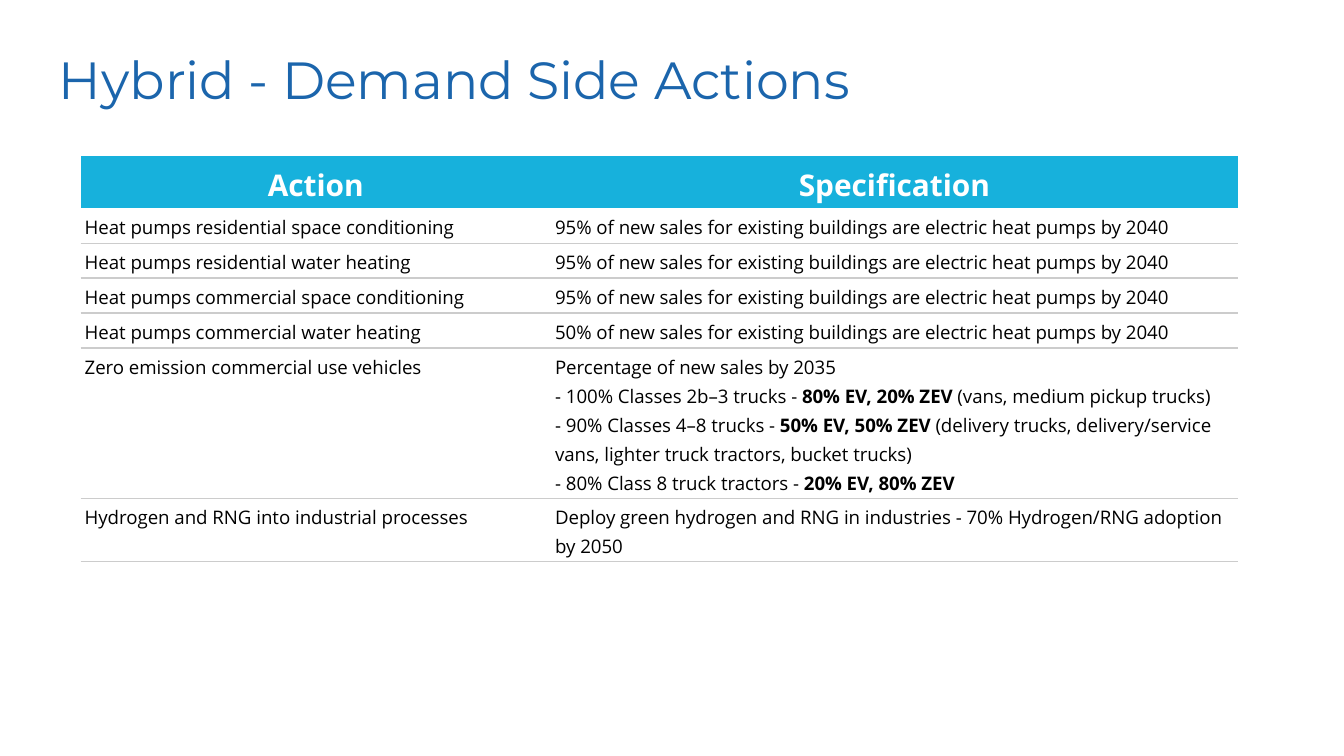
"""Build the slide of demand side actions for the hybrid case."""
from lxml.etree import SubElement
from pptx import Presentation
from pptx.dml.color import RGBColor
from pptx.enum.text import MSO_ANCHOR, PP_ALIGN
from pptx.oxml import parse_xml
from pptx.oxml.ns import nsdecls, qn
from pptx.util import Inches, Pt

BLUE = RGBColor(0x1B, 0x65, 0xAC)
CYAN = RGBColor(0x17, 0xB1, 0xDC)
GRAY = RGBColor(0xCC, 0xCC, 0xCC)
WHITE = RGBColor(0xFF, 0xFF, 0xFF)
BLACK = RGBColor(0, 0, 0)
PLAIN = "{2D5ABB26-0587-4C30-8999-92F81FD0307C}"

TITLE = "Hybrid - Demand Side Actions"
SALES = "% of new sales for existing buildings are electric heat pumps by 2040"
MARK = "*"
ROWS = [
    ("Action", ["Specification"]),
    ("Heat pumps residential space conditioning", ["95" + SALES]),
    ("Heat pumps residential water heating", ["95" + SALES]),
    ("Heat pumps commercial space conditioning", ["95" + SALES]),
    ("Heat pumps commercial water heating", ["50" + SALES]),
    ("Zero emission commercial use vehicles", [
        "Percentage of new sales by 2035",
        "- 100% Classes 2b–3 trucks - *80% EV, 20% ZEV* (vans, medium pickup trucks)",
        "- 90% Classes 4–8 trucks - *50% EV, 50% ZEV *(delivery trucks, "
        "delivery/service vans, lighter truck tractors, bucket trucks)",
        "- 80% Class 8 truck tractors - *20% EV, 80% ZEV*",
    ]),
    ("Hydrogen and RNG into industrial processes", [
        "Deploy green hydrogen and RNG in industries - 70% Hydrogen/RNG adoption by 2050",
    ]),
]
WIDTHS = [3.5, 5.11]
HIGHS = [0.39] + [0.26] * 4 + [1.12, 0.47]


def style(run, font, size, color, bold=False):
    """Set the font of a run."""
    run.font.name = font
    run.font.size = Pt(size)
    run.font.bold = bold
    run.font.color.rgb = color


def write(cell, lines, head):
    """Fill a cell with lines, where marks switch bold on and off."""
    cell.margin_left = cell.margin_right = Inches(0.03)
    cell.margin_top = cell.margin_bottom = Inches(0.02)
    cell.vertical_anchor = MSO_ANCHOR.BOTTOM if head else MSO_ANCHOR.TOP
    frame = cell.text_frame
    for num, line in enumerate(lines):
        para = frame.add_paragraph() if num else frame.paragraphs[0]
        para.line_spacing = 1.15
        para.alignment = PP_ALIGN.CENTER if head else PP_ALIGN.LEFT
        for part, text in enumerate(line.split(MARK)):
            if text:
                run = para.add_run()
                run.text = text
                style(run, "Open Sans", 16 if head else 10,
                      WHITE if head else BLACK, head or part % 2 == 1)


def rule(cell):
    """Draw a thin line under a cell."""
    edge = parse_xml(
        f'<a:lnB {nsdecls("a")} w="{Pt(0.75)}"><a:solidFill>'
        f'<a:srgbClr val="{GRAY}"/></a:solidFill></a:lnB>')
    cell._tc.get_or_add_tcPr().insert(0, edge)


def add_title(slide):
    """Add the slide title."""
    box = slide.shapes.add_textbox(
        Inches(0.34), Inches(0.25), Inches(9.14), Inches(0.63))
    frame = box.text_frame
    frame.word_wrap = True
    frame.margin_left = frame.margin_right = Inches(0.1)
    frame.margin_top = frame.margin_bottom = Inches(0.1)
    frame.text = TITLE
    style(frame.paragraphs[0].runs[0], "Montserrat", 28, BLUE)


def add_grid(slide):
    """Add the table of actions."""
    table = slide.shapes.add_table(
        len(ROWS), len(WIDTHS), Inches(0.6), Inches(1.16),
        Inches(sum(WIDTHS)), Inches(sum(HIGHS))).table
    table.horz_banding = False
    props = table._tbl.tblPr
    for old in props.findall(qn("a:tableStyleId")):
        props.remove(old)
    SubElement(props, qn("a:tableStyleId")).text = PLAIN
    for col, width in zip(table.columns, WIDTHS):
        col.width = Inches(width)
    for num, (row, high) in enumerate(zip(table.rows, HIGHS)):
        row.height = Inches(high)
        action, spec = ROWS[num]
        head = num == 0
        for cell, lines in zip(row.cells, ([action], spec)):
            write(cell, lines, head)
            if head:
                cell.fill.solid()
                cell.fill.fore_color.rgb = CYAN
            else:
                cell.fill.background()
                rule(cell)


def main():
    """Build and save the deck."""
    deck = Presentation()
    deck.slide_width, deck.slide_height = Inches(10), Inches(10 * 9 / 16)
    slide = deck.slides.add_slide(deck.slide_layouts[6])
    add_title(slide)
    add_grid(slide)
    deck.save("out.pptx")


if __name__ == "__main__":
    main()
